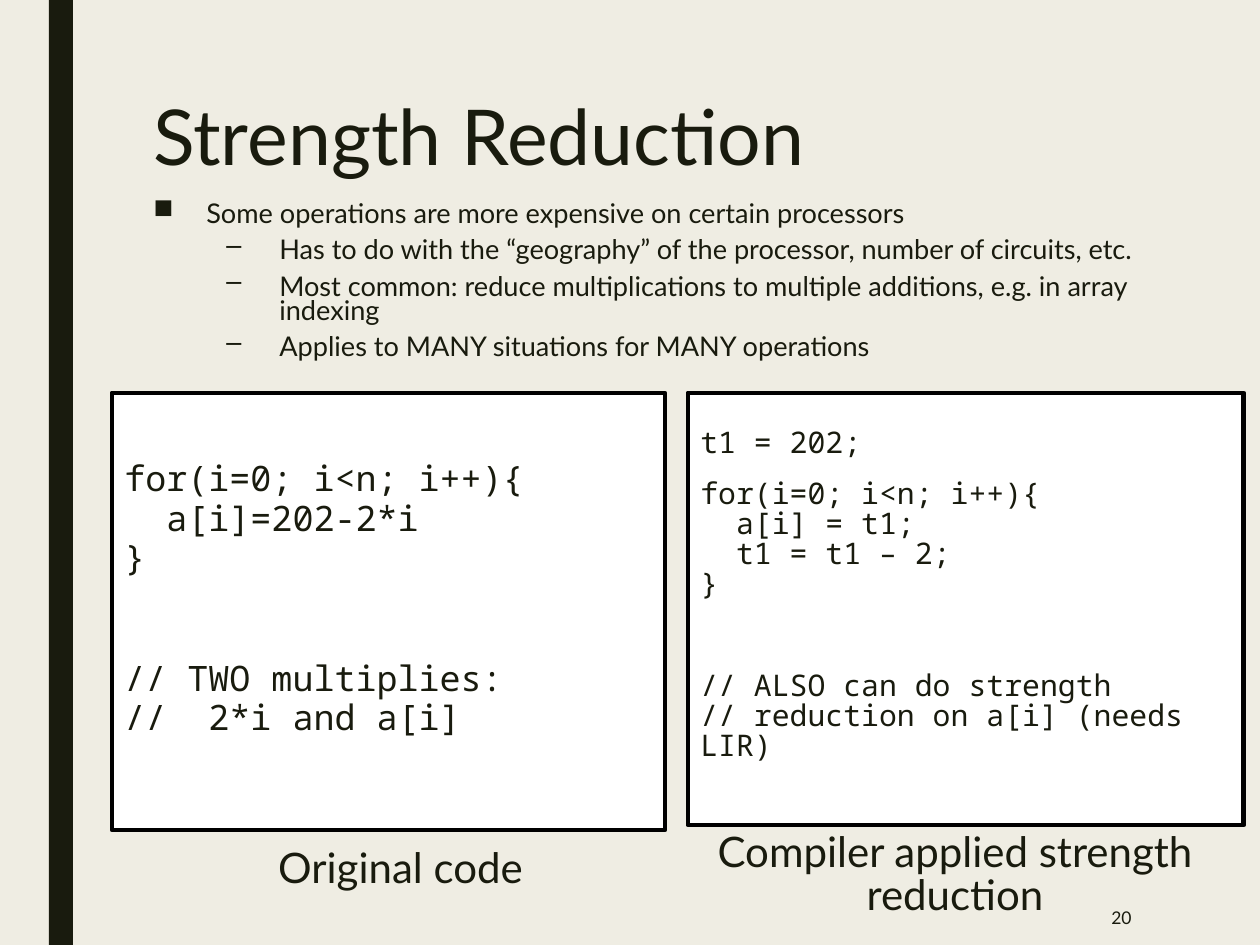
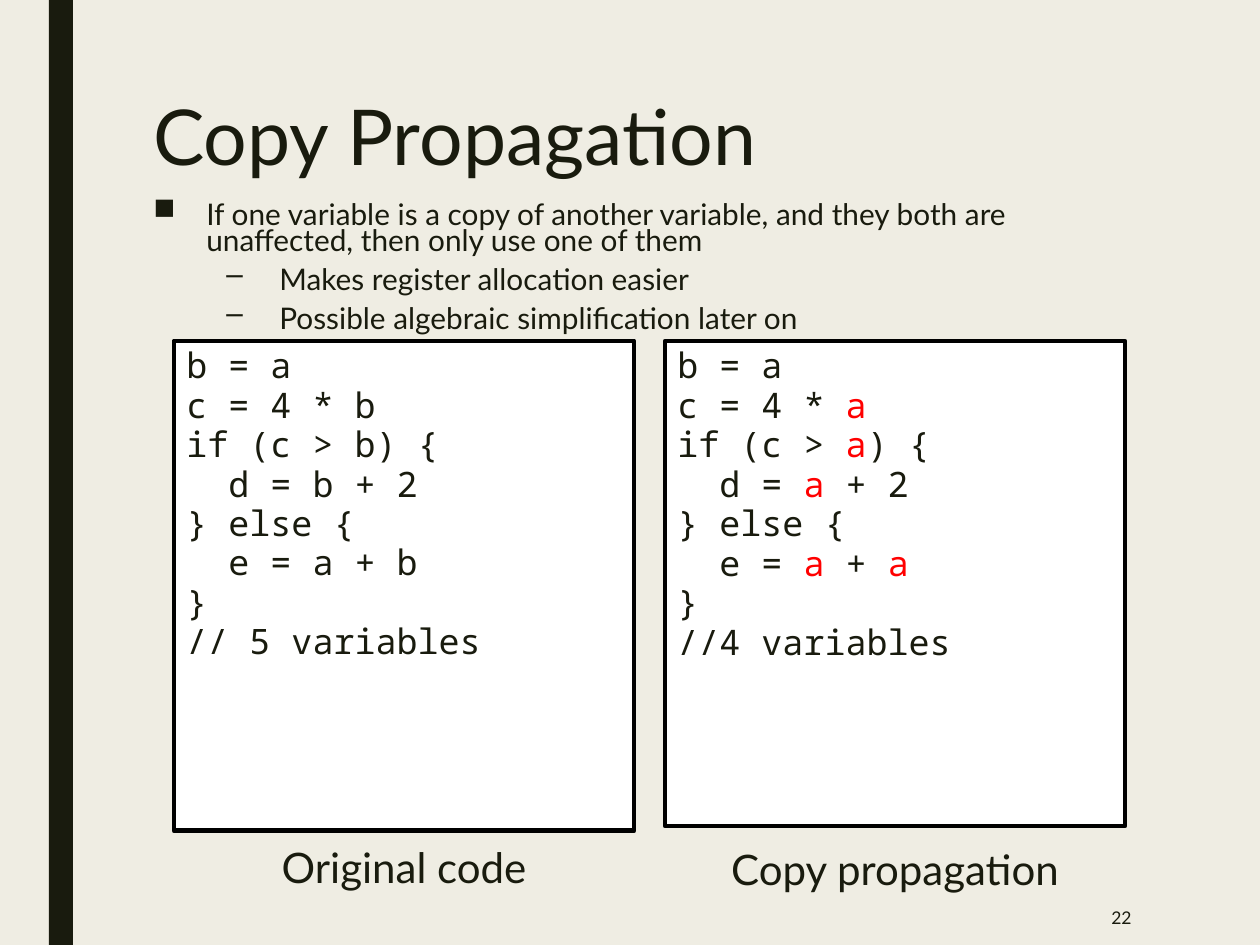
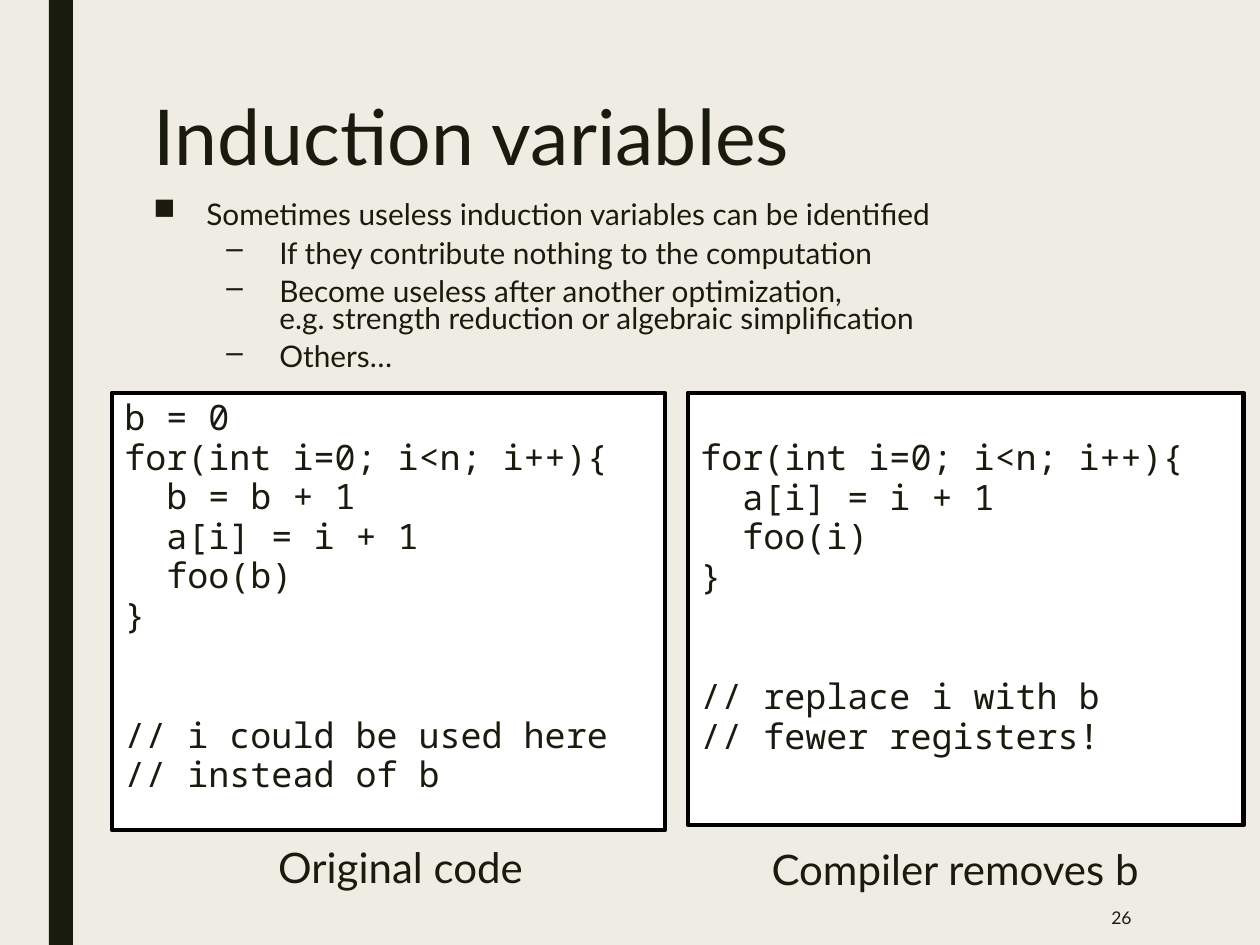
import dataclasses

import pptx
import pptx.dml.color
import pptx.enum.shapes
import pptx.enum.text
import pptx.oxml.ns
import pptx.util
from lxml import etree

ALIGN = pptx.enum.text.PP_ALIGN
ANCHOR = pptx.enum.text.MSO_ANCHOR
PX_PER_INCH = 126


@dataclasses.dataclass(frozen=True)
class Theme:
    paper: str = "EFEDE3"
    ink: str = "191B0E"
    code_fill: str = "FFFFFF"
    code_line: str = "000000"
    changed: str = "FF0000"
    text_font: str = "Lato"
    code_font: str = "Noto Sans Mono"
    title_size: float = 44
    caption_size: float = 24
    code_size: float = 20
    small_code_size: float = 17
    bullet_size: float = 17
    small_bullet_size: float = 15.5
    number_size: float = 10


THEME = Theme()

# Panel rectangles: left, top, width, height
WIDE_PANELS = ((112, 393, 553, 437), (688, 393, 556, 432))
NARROW_PANELS = ((174, 341, 460, 490), (665, 341, 460, 485))
# Caption rectangles under them
WIDE_CAPTIONS = ((112, 848, 577, 50), (665, 847, 580, 53))
TALL_CAPTIONS = (WIDE_CAPTIONS[0], (665, 847, 580, 78))
NARROW_CAPTIONS = ((174, 848, 460, 50), (665, 847, 460, 53))


def px(length):
    return pptx.util.Emu(round(length * pptx.util.Inches(1) / PX_PER_INCH))


def color(value):
    return pptx.dml.color.RGBColor.from_string(value)


def style(para, size, font=THEME.text_font, spacing=None, align=ALIGN.LEFT):
    para.alignment = align
    if spacing:
        para.line_spacing = spacing
    para.font.size = pptx.util.Pt(size)
    para.font.name = font
    para.font.color.rgb = color(THEME.ink)


def add_paragraphs(frame, count):
    return [frame.paragraphs[0]] + [frame.add_paragraph() for _ in range(count - 1)]


def add_text_box(page, place, anchor=ANCHOR.TOP):
    box = page.shapes.add_textbox(*map(px, place))
    box.text_frame.word_wrap = True
    box.text_frame.vertical_anchor = anchor
    return box.text_frame


def add_label(page, place, text, size, anchor=ANCHOR.TOP, **look):
    para = add_text_box(page, place, anchor).paragraphs[0]
    para.text = text
    style(para, size, **look)


def add_bullets(page, place, items, size):
    """Each item is (level, text)."""
    frame = add_text_box(page, place)
    for index, (para, (level, text)) in enumerate(
            zip(add_paragraphs(frame, len(items)), items)):
        para.text = text
        para.level = level
        properties = para._p.get_or_add_pPr()
        properties.set("marL", str(px((53, 126)[level])))
        properties.set("indent", str(px(-53)))
        mark = etree.SubElement(properties, pptx.oxml.ns.qn("a:buChar"))
        mark.set("char", "■–"[level])
        para.space_before = pptx.util.Pt((10, 5)[level] if index else 0)
        para.space_after = pptx.util.Pt(2)
        style(para, size, spacing=0.74)


def add_code_line(para, line):
    """Backquotes enclose the changed parts of a line."""
    for index, part in enumerate(line.split("`")):
        if part:
            span = para.add_run()
            span.text = part
            if index % 2:
                span.font.color.rgb = color(THEME.changed)


def add_code_panel(page, place, blocks, size, spacing, top_inset=6):
    """Each block is (gap above in px, code)."""
    panel = page.shapes.add_shape(
        pptx.enum.shapes.MSO_SHAPE.RECTANGLE, *map(px, place))
    panel.shadow.inherit = False
    panel.fill.solid()
    panel.fill.fore_color.rgb = color(THEME.code_fill)
    panel.line.color.rgb = color(THEME.code_line)
    panel.line.width = pptx.util.Pt(2.75)
    frame = panel.text_frame
    frame.word_wrap = True
    frame.vertical_anchor = ANCHOR.TOP
    frame.margin_top = px(top_inset)
    for para, (gap, code) in zip(add_paragraphs(frame, len(blocks)), blocks):
        for index, line in enumerate(code.split("\n")):
            if index:
                para.add_line_break()
            add_code_line(para, line)
        para.space_before = px(gap)
        style(para, size, THEME.code_font, spacing)


def add_captions(page, places, texts):
    for place, text in zip(places, texts):
        add_label(page, place, text, THEME.caption_size, ANCHOR.BOTTOM,
                  spacing=0.84, align=ALIGN.CENTER)


def add_page(deck, title, number):
    page = deck.slides.add_slide(deck.slide_layouts[6])
    page.background.fill.solid()
    page.background.fill.fore_color.rgb = color(THEME.paper)
    band = page.shapes.add_shape(
        pptx.enum.shapes.MSO_SHAPE.RECTANGLE, *map(px, (49, 0, 24, 945)))
    band.shadow.inherit = False
    band.fill.solid()
    band.fill.fore_color.rgb = color(THEME.ink)
    band.line.fill.background()
    add_label(page, (141, 94, 993, 204), title, THEME.title_size, spacing=0.89)
    add_label(page, (979, 890, 165, 55), str(number), THEME.number_size,
              ANCHOR.MIDDLE, align=ALIGN.RIGHT)
    return page


def add_strength_reduction(deck):
    page = add_page(deck, "Strength Reduction", 20)
    add_captions(page, TALL_CAPTIONS,
                 ("Original code", "Compiler applied strength reduction"))
    add_code_panel(page, WIDE_PANELS[0], [
        (0, "for(i=0; i<n; i++){\n  a[i]=202-2*i\n}"),
        (81, "// TWO multiplies:\n//  2*i and a[i]"),
    ], THEME.code_size, 0.94, top_inset=67)
    add_code_panel(page, WIDE_PANELS[1], [
        (0, "t1 = 202;"),
        (21, "for(i=0; i<n; i++){\n  a[i] = t1;\n  t1 = t1 – 2;\n}"),
        (72, "// ALSO can do strength\n// reduction on a[i] (needs LIR)"),
    ], THEME.small_code_size, 0.84, top_inset=36)
    add_bullets(page, (141, 198, 1102, 179), [
        (0, "Some operations are more expensive on certain processors"),
        (1, "Has to do with the “geography” of the processor, number of circuits, etc."),
        (1, "Most common: reduce multiplications to multiple additions, "
            "e.g. in array indexing"),
        (1, "Applies to MANY situations for MANY operations"),
    ], THEME.small_bullet_size)


def add_copy_propagation(deck):
    page = add_page(deck, "Copy Propagation", 22)
    add_captions(page, NARROW_CAPTIONS, ("Original code", "Copy propagation"))
    programs = (
        "b = a\nc = 4 * b\nif (c > b) {\n  d = b + 2\n} else {\n"
        "  e = a + b\n}\n// 5 variables",
        "b = a\nc = 4 * `a`\nif (c > `a`) {\n  d = `a` + 2\n} else {\n"
        "  e = `a` + `a`\n}\n//4 variables",
    )
    for place, code in zip(NARROW_PANELS, programs):
        add_code_panel(page, place, [(0, code)], THEME.code_size, 0.94)
    add_bullets(page, (141, 198, 993, 144), [
        (0, "If one variable is a copy of another variable, and they both are "
            "unaffected, then only use one of them"),
        (1, "Makes register allocation easier"),
        (1, "Possible algebraic simplification later on"),
    ], THEME.bullet_size)


def add_induction_variables(deck):
    page = add_page(deck, "Induction variables", 26)
    add_captions(page, WIDE_CAPTIONS, ("Original code", "Compiler removes b"))
    add_code_panel(page, WIDE_PANELS[0], [
        (0, "b = 0\nfor(int i=0; i<n; i++){\n  b = b + 1\n  a[i] = i + 1\n"
            "  foo(b)\n}"),
        (81, "// i could be used here\n// instead of b"),
    ], THEME.code_size, 0.94)
    add_code_panel(page, WIDE_PANELS[1], [
        (0, "for(int i=0; i<n; i++){\n  a[i] = i + 1\n  foo(i)\n}"),
        (81, "// replace i with b\n// fewer registers!"),
    ], THEME.code_size, 0.94, top_inset=46)
    add_bullets(page, (141, 198, 993, 194), [
        (0, "Sometimes useless induction variables can be identified"),
        (1, "If they contribute nothing to the computation"),
        (1, "Become useless after another optimization,\n"
            "e.g. strength reduction or algebraic simplification"),
        (1, "Others…"),
    ], THEME.bullet_size)


def main():
    deck = pptx.Presentation()
    deck.slide_width = px(1260)
    deck.slide_height = px(945)
    add_strength_reduction(deck)
    add_copy_propagation(deck)
    add_induction_variables(deck)
    deck.save("out.pptx")


if __name__ == "__main__":
    main()
